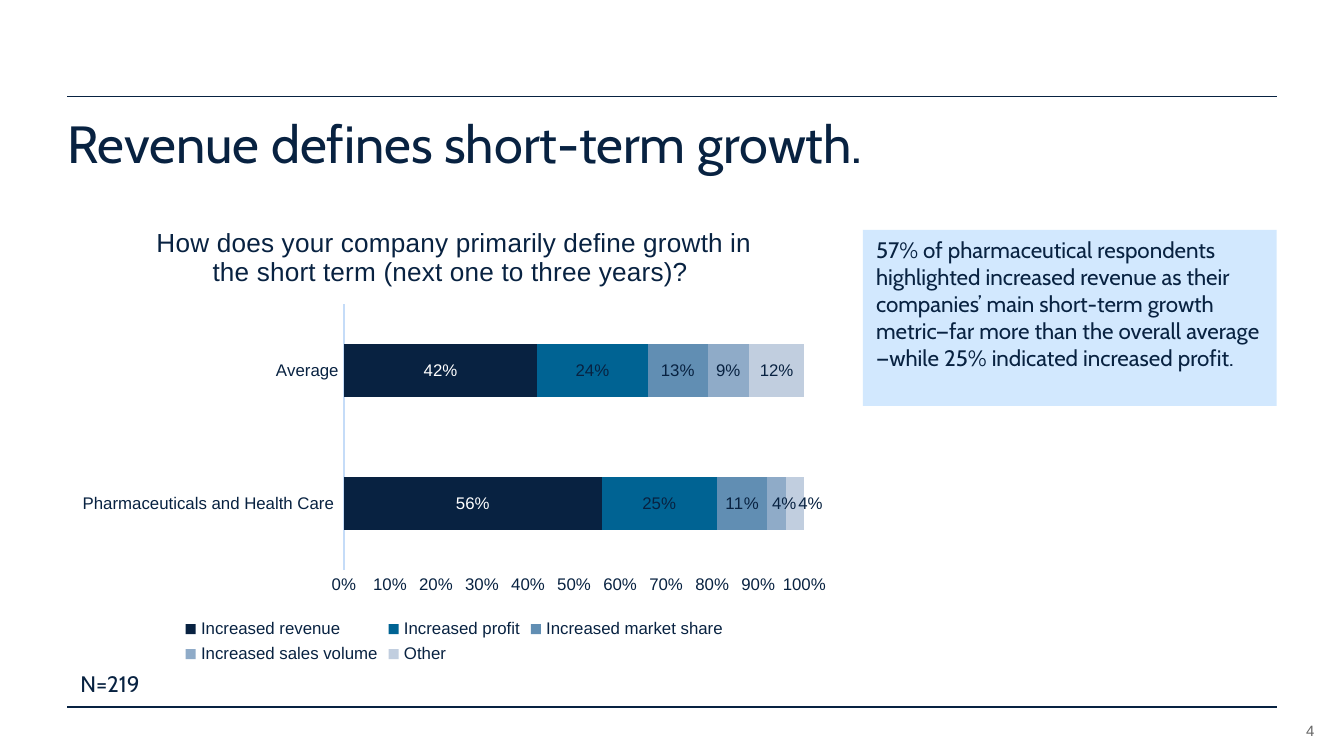
from lxml import etree
from pptx import Presentation, util as u
from pptx.chart.data import CategoryChartData
from pptx.dml.color import RGBColor
from pptx.enum import chart as ch, shapes, text
from pptx.oxml import ns

COLORS = {
    "navy": "082241", "teal": "006393", "steel": "618EB3", "mist": "8FABC8",
    "haze": "C1CEDF", "axis": "C5DCF8", "callout": "D2E8FE",
    "grey": "666666", "white": "FFFFFF",
}
SLIDE_WIDTH = u.Inches(10)
SLIDE_HEIGHT = SLIDE_WIDTH * 9 // 16
COLUMN = SLIDE_WIDTH / 100
ROW = SLIDE_HEIGHT / 56.25
LEFT, RIGHT = 5, 95
PADDING = (0.1, 0.05)

GROWTH_METRICS = [
    ("Increased revenue", (0.56, 0.42), "navy", "white", 0),
    ("Increased profit", (0.25, 0.24), "teal", "navy", 0),
    ("Increased market share", (0.11, 0.13), "steel", "navy", 0),
    ("Increased sales volume", (0.04, 0.09), "mist", "navy", 0.01),
    ("Other", (0.04, 0.12), "haze", "navy", 0.02),
]


def rgb(color):
    return RGBColor.from_string(COLORS[color])


def grid(left, top, width, height):
    return [u.Emu(round(n * step)) for n, step in
            zip((left, top, width, height), (COLUMN, ROW, COLUMN, ROW))]


def style(font, size, color="navy", face="Arial"):
    font.size, font.name, font.bold = u.Pt(size), face, False
    font.color.rgb = rgb(color)


def write(frame, words, size, color="navy", face="Cabin", padding=(0, 0),
          align=text.PP_ALIGN.LEFT, anchor=text.MSO_ANCHOR.TOP):
    frame.word_wrap = True
    frame.vertical_anchor = anchor
    frame.margin_left = frame.margin_right = u.Inches(padding[0])
    frame.margin_top = frame.margin_bottom = u.Inches(padding[1])
    line = frame.paragraphs[0]
    line.alignment = align
    run = line.add_run()
    run.text = words
    style(run.font, size, color, face)
    return line


def add_rule(slide, row):
    x1, y, width, _ = grid(LEFT, row, RIGHT - LEFT, 0)
    rule = slide.shapes.add_connector(
        shapes.MSO_CONNECTOR.STRAIGHT, x1, y, x1 + width, y)
    rule.line.color.rgb = rgb("navy")
    rule.line.width = u.Pt(0.75)
    etree.SubElement(rule._element.spPr, ns.qn("a:effectLst"))


def add_headline(slide, box):
    headline = slide.shapes.add_textbox(*grid(*box))
    line = write(headline.text_frame, "Revenue defines short-term growth.", 28)
    line.line_spacing = 0.9


def add_callout(slide, box):
    callout = slide.shapes.add_shape(shapes.MSO_SHAPE.RECTANGLE, *grid(*box))
    callout.shadow.inherit = False
    callout.fill.solid()
    callout.fill.fore_color.rgb = rgb("callout")
    callout.line.fill.background()
    write(callout.text_frame,
          "57% of pharmaceutical respondents highlighted increased revenue as "
          "their companies’ main short-term growth metric—far more than the "
          "overall average—while 25% indicated increased profit.",
          12, padding=PADDING)


def add_sample_size(slide, box):
    sample = slide.shapes.add_textbox(*grid(*box))
    write(sample.text_frame, "N=219", 12, padding=PADDING)


def add_page_number(slide, box):
    number = slide.shapes.add_textbox(*grid(*box))
    write(number.text_frame, "4", 8, "grey", "Arial",
          align=text.PP_ALIGN.RIGHT, anchor=text.MSO_ANCHOR.BOTTOM)


def nudge_first_label(metric, color, shift):
    label = metric.points[0].data_label
    style(label.font, 9, color)
    label.position = ch.XL_LABEL_POSITION.CENTER
    layout = etree.Element(ns.qn("c:layout"))
    manual = etree.SubElement(layout, ns.qn("c:manualLayout"))
    for axis, value in (("x", shift), ("y", 0)):
        etree.SubElement(manual, ns.qn("c:" + axis)).set("val", str(value))
    metric._element.xpath("c:dLbls/c:dLbl")[0].insert(1, layout)


def add_growth_chart(slide, box):
    answers = CategoryChartData(number_format="0%")
    answers.categories = ["Pharmaceuticals and Health Care ", "Average"]
    for name, shares, *_ in GROWTH_METRICS:
        answers.add_series(name, shares)
    chart = slide.shapes.add_chart(
        ch.XL_CHART_TYPE.BAR_STACKED_100, *grid(*box), answers).chart
    style(chart.font, 10)

    question = chart.chart_title.text_frame.paragraphs[0].add_run()
    question.text = ("How does your company primarily define growth in "
                     "the short term (next one to three years)? ")
    style(question.font, 14)
    chart.chart_title.include_in_layout = False

    chart.has_legend = True
    chart.legend.position = ch.XL_LEGEND_POSITION.BOTTOM
    chart.legend.include_in_layout = False
    style(chart.legend.font, 9)

    for axis in (chart.category_axis, chart.value_axis):
        axis.has_major_gridlines = False
        axis.major_tick_mark = axis.minor_tick_mark = ch.XL_TICK_MARK.NONE
        style(axis.tick_labels.font, 9)
    chart.category_axis.format.line.color.rgb = rgb("axis")
    chart.category_axis.format.line.width = u.Pt(0.75)
    chart.value_axis.format.line.fill.background()
    chart.value_axis.tick_labels.number_format = "0%"
    chart.value_axis.tick_labels.number_format_is_linked = False

    bars = chart.plots[0]
    bars.gap_width, bars.overlap = 150, 100
    bars.vary_by_categories = False
    for metric, (_, _, fill, color, shift) in zip(bars.series, GROWTH_METRICS):
        metric.format.fill.solid()
        metric.format.fill.fore_color.rgb = rgb(fill)
        labels = metric.data_labels
        labels.show_value = True
        labels.position = ch.XL_LABEL_POSITION.CENTER
        labels.number_format = "0%"
        labels.number_format_is_linked = False
        style(labels.font, 9, color)
        if shift:
            nudge_first_label(metric, color, shift)


def main():
    deck = Presentation()
    deck.slide_width, deck.slide_height = SLIDE_WIDTH, SLIDE_HEIGHT
    slide = deck.slides.add_slide(deck.slide_layouts[6])
    for row in (7.2, 52.6):
        add_rule(slide, row)
    add_page_number(slide, (93.1, 53.2, 4.7, 1.8))
    add_headline(slide, (LEFT, 8.8, RIGHT - LEFT, 5.5))
    add_callout(slide, (64.2, 17.1, RIGHT - 64.2, 13.1))
    add_sample_size(slide, (LEFT, 49.4, 16.5, 3))
    add_growth_chart(slide, (LEFT, 15.2, 57.6, 34.6))
    deck.save("out.pptx")


if __name__ == "__main__":
    main()
